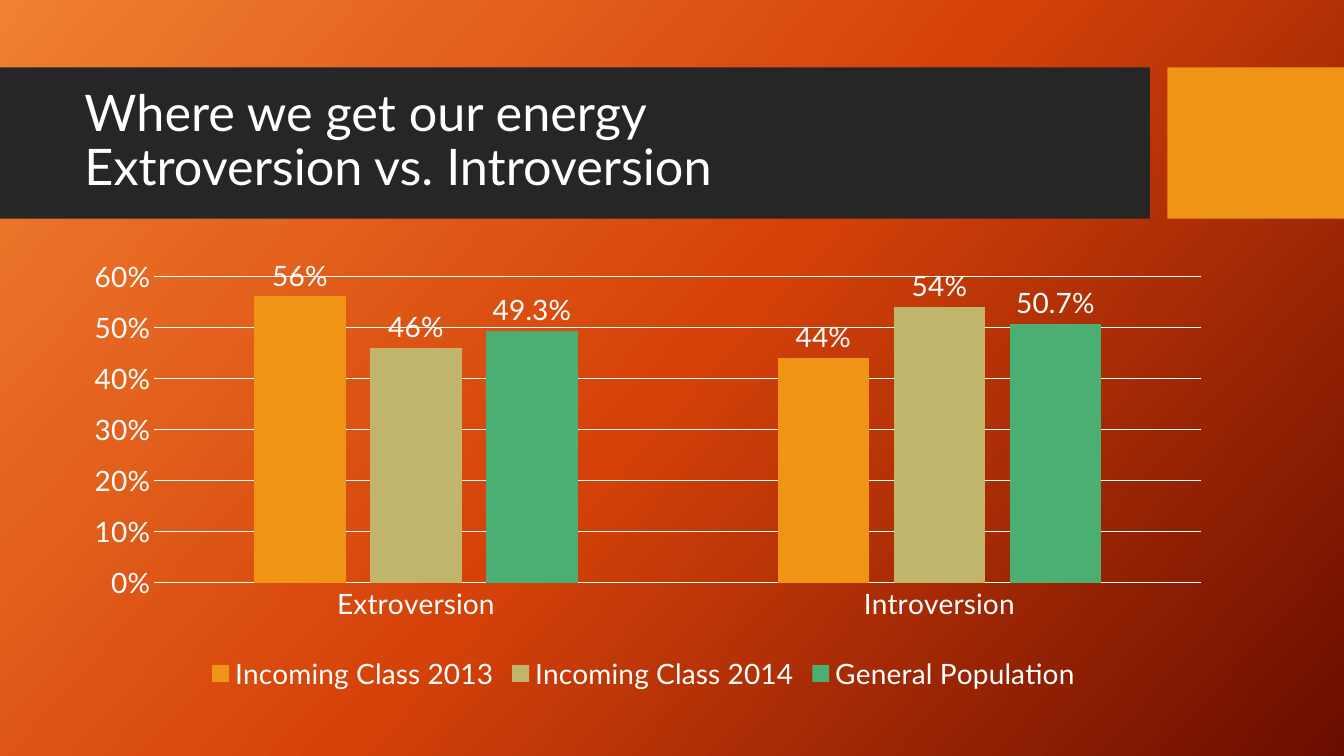
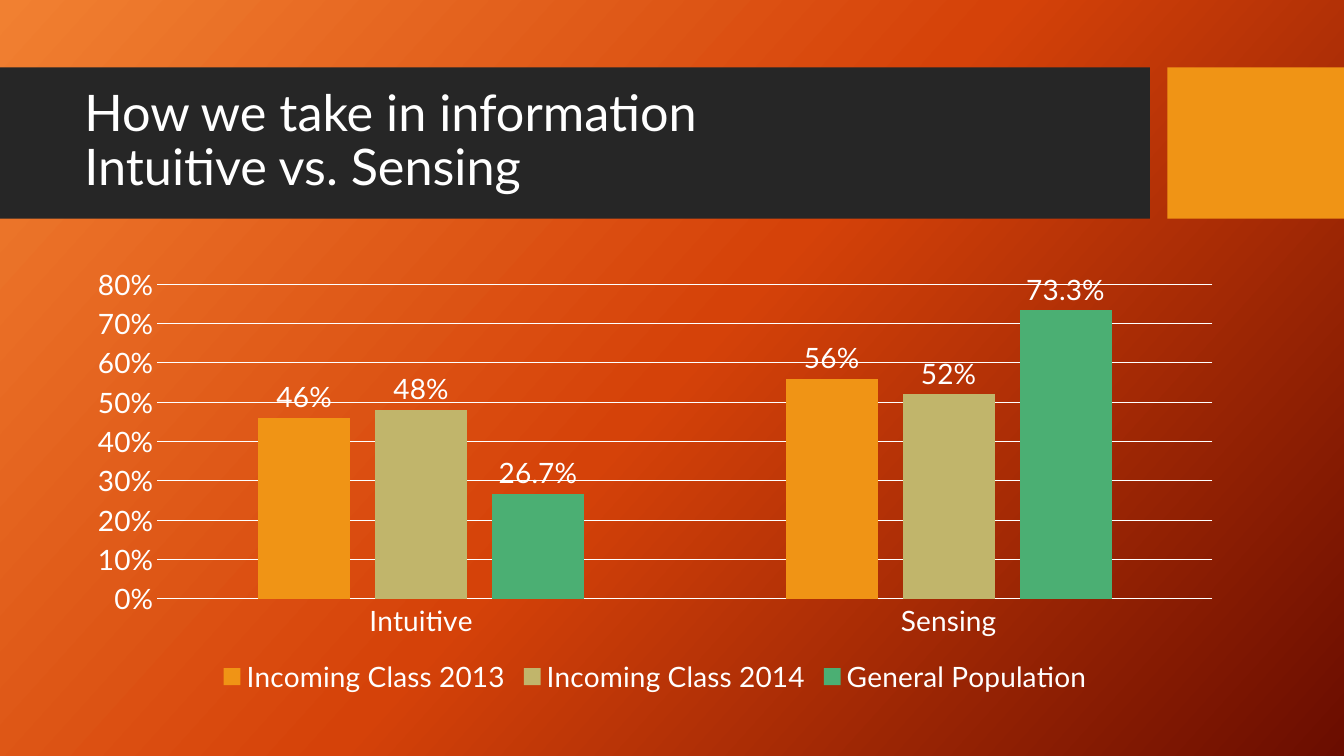
"""Builds two slides comparing personality preferences of incoming classes."""
from copy import deepcopy

from pptx import Presentation
from pptx.chart.data import CategoryChartData
from pptx.dml.color import RGBColor
from pptx.enum.chart import XL_CHART_TYPE, XL_LABEL_POSITION, XL_LEGEND_POSITION, XL_TICK_MARK
from pptx.enum.shapes import MSO_SHAPE
from pptx.enum.text import MSO_ANCHOR
from pptx.oxml import parse_xml
from pptx.oxml.ns import nsdecls, qn
from pptx.util import Cm, Pt

COLUMNS = XL_CHART_TYPE.COLUMN_CLUSTERED
OUTSIDE_END = XL_LABEL_POSITION.OUTSIDE_END
BOTTOM = XL_LEGEND_POSITION.BOTTOM
NO_TICK = XL_TICK_MARK.NONE
RECTANGLE = MSO_SHAPE.RECTANGLE
MIDDLE = MSO_ANCHOR.MIDDLE

SLIDE_WIDTH, SLIDE_HEIGHT = 33.87, 19.05
LEFT_MARGIN = 1.88
GROUPS = [
    ("Incoming Class 2013", "F09415", "0%"),
    ("Incoming Class 2014", "C1B56B", "0%"),
    ("General Population", "4BAF73", "0.0%"),
]


def rgb(hex_colour):
    return RGBColor.from_string(hex_colour)


class Deck:
    FONT = "Lato"
    WHITE, BAND, ACCENT = "FFFFFF", "262626", "F09415"
    GRADIENT = [(0, "F18031"), (0.5, "D54209"), (1, "6A0D00")]
    GRADIENT_ANGLE = 318
    TITLE_SIZE, CHART_SIZE = 36, 20
    BAND_TOP, BAND_HEIGHT, BAND_WIDTH, ACCENT_LEFT = 1.7, 3.81, 28.98, 29.42

    def __init__(self):
        self.presentation = Presentation()
        self.presentation.slide_width = Cm(SLIDE_WIDTH)
        self.presentation.slide_height = Cm(SLIDE_HEIGHT)
        self.slide = None

    def add_slide(self, title):
        self.slide = self.presentation.slides.add_slide(self.presentation.slide_layouts[6])
        self.paint_background()
        self.add_band(0, self.BAND_WIDTH, self.BAND)
        self.add_band(self.ACCENT_LEFT, SLIDE_WIDTH - self.ACCENT_LEFT, self.ACCENT)
        self.add_title(title)

    def paint_background(self):
        fill = self.slide.background.fill
        fill.gradient()
        fill.gradient_angle = self.GRADIENT_ANGLE
        stop_list = self.slide.element.find(".//" + qn("a:gsLst"))
        stop_list.insert(1, deepcopy(stop_list[0]))
        for stop, (position, colour) in zip(fill.gradient_stops, self.GRADIENT):
            stop.position = position
            stop.color.rgb = rgb(colour)

    def add_band(self, left, width, colour):
        band = self.slide.shapes.add_shape(
            RECTANGLE, Cm(left), Cm(self.BAND_TOP), Cm(width), Cm(self.BAND_HEIGHT))
        band.shadow.inherit = False
        band.fill.solid()
        band.fill.fore_color.rgb = rgb(colour)
        band.line.fill.background()

    def add_title(self, title):
        frame = self.slide.shapes.add_textbox(
            Cm(LEFT_MARGIN), Cm(2.08), Cm(26.7), Cm(3)).text_frame
        frame.word_wrap = True
        frame.vertical_anchor = MIDDLE
        paragraph = frame.paragraphs[0]
        paragraph.text = title
        paragraph.line_spacing = 0.9
        for run in paragraph.runs:
            self.style_font(run.font, self.TITLE_SIZE)

    def style_font(self, font, size):
        font.name = self.FONT
        font.size = Pt(size)
        font.bold = False
        font.color.rgb = rgb(self.WHITE)

    def style_line(self, line):
        line.color.rgb = rgb(self.WHITE)
        line.width = Pt(0.75)

    def add_chart(self, categories, shares, top_share, width, height, plot_area=None):
        data = CategoryChartData(number_format="0%")
        data.categories = categories
        for (group, _, number_format), values in zip(GROUPS, shares):
            data.add_series(group, values, number_format)
        chart = self.slide.shapes.add_chart(
            COLUMNS, Cm(LEFT_MARGIN), Cm(6.5), Cm(width), Cm(height), data).chart
        self.style_font(chart.font, self.CHART_SIZE)
        chart.has_title = False
        chart.has_legend = True
        chart.legend.position = BOTTOM
        chart.legend.include_in_layout = False
        self.style_font(chart.legend.font, self.CHART_SIZE)
        self.style_axes(chart, top_share)
        self.style_columns(chart.plots[0])
        if plot_area:
            self.place_plot(chart, plot_area)

    def style_axes(self, chart, top_share):
        for axis in (chart.category_axis, chart.value_axis):
            axis.major_tick_mark = axis.minor_tick_mark = NO_TICK
            self.style_font(axis.tick_labels.font, self.CHART_SIZE)
        self.style_line(chart.category_axis.format.line)
        share_axis = chart.value_axis
        share_axis.minimum_scale, share_axis.maximum_scale = 0, top_share
        share_axis.major_unit = 0.1
        share_axis.tick_labels.number_format = "0%"
        share_axis.tick_labels.number_format_is_linked = False
        share_axis.format.line.fill.background()
        self.style_line(share_axis.major_gridlines.format.line)

    def style_columns(self, plot):
        plot.gap_width, plot.overlap = 219, -27
        plot.vary_by_categories = False
        for series, (_, colour, number_format) in zip(plot.series, GROUPS):
            series.format.fill.solid()
            series.format.fill.fore_color.rgb = rgb(colour)
            labels = series.data_labels
            labels.show_value = True
            labels.position = OUTSIDE_END
            labels.number_format = number_format
            labels.number_format_is_linked = False
            self.style_font(labels.font, self.CHART_SIZE)

    def place_plot(self, chart, plot_area):
        area = chart.element.find(".//" + qn("c:plotArea"))
        for layout in area.findall(qn("c:layout")):
            area.remove(layout)
        modes = '<c:xMode val="edge"/><c:yMode val="edge"/>'
        lengths = "".join(
            f'<c:{side} val="{share}"/>' for side, share in zip("xywh", plot_area))
        area.insert(0, parse_xml(
            f'<c:layout {nsdecls("c")}><c:manualLayout><c:layoutTarget val="inner"/>'
            f"{modes}{lengths}</c:manualLayout></c:layout>"))


def main():
    deck = Deck()
    deck.add_slide("Where we get our energy\vExtroversion vs. Introversion")
    deck.add_chart(
        ["Extroversion", "Introversion"],
        [(0.56, 0.44), (0.46, 0.54), (0.493, 0.507)],
        top_share=0.6, width=28.68, height=11.05, plot_area=(0.07, 0.04, 0.92, 0.7))
    deck.add_slide("How we take in information\vIntuitive vs. Sensing")
    deck.add_chart(
        ["Intuitive", "Sensing"],
        [(0.46, 0.56), (0.48, 0.52), (0.267, 0.733)],
        top_share=0.8, width=29.26, height=11.13)
    deck.presentation.save("out.pptx")


if __name__ == "__main__":
    main()
